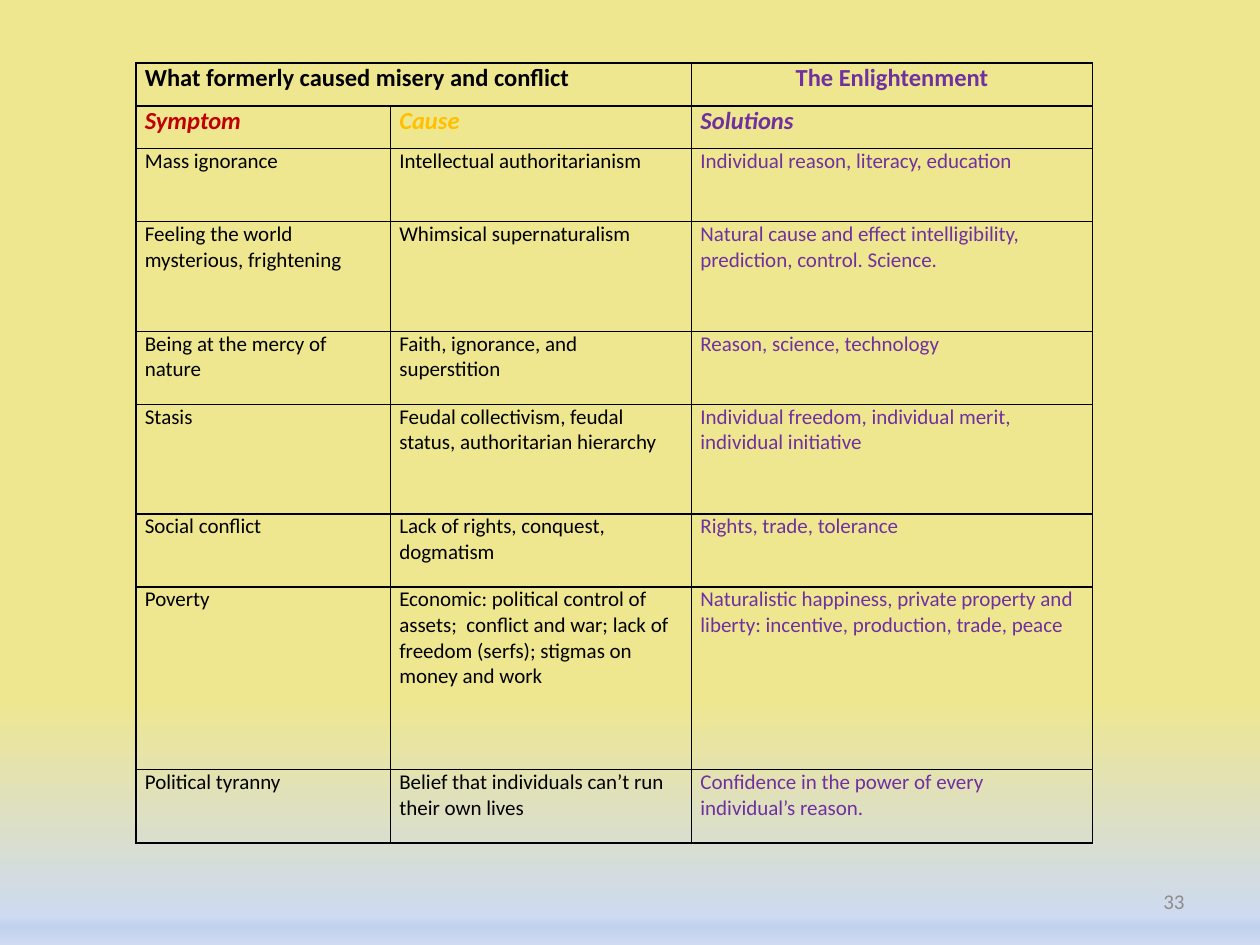
from typing import NamedTuple

from lxml import etree
from pptx import Presentation
from pptx.dml.color import RGBColor
from pptx.enum import text
from pptx.oxml import ns
from pptx.util import Inches, Pt

COLORS = {
    "ink": "000000",
    "symptom": "C00000",
    "cause": "FFC000",
    "solution": "7030A0",
    "number": "8C8C8C",
}
BACKGROUND_STOPS = [(74, "EEE790"), (97, "CEDAF0"), (98, "C2D1ED"), (100, "CFDBF0"), (100, "E1E8F5")]
FONT = "Calibri"
COLUMN_WIDTHS = [2.02, 2.39, 3.18]
HEADER_HEIGHT = 0.34
LINE_HEIGHT = 0.29


class Style(NamedTuple):
    color: str = "ink"
    size: int = 12
    bold: bool = False
    italic: bool = False
    align: text.PP_ALIGN = text.PP_ALIGN.LEFT


class Problem(NamedTuple):
    symptom: str
    cause: str
    solution: str
    lines: int


PROBLEMS = [
    Problem("Mass ignorance", "Intellectual authoritarianism",
            "Individual reason, literacy, education", 2),
    Problem("Feeling the world mysterious, frightening", "Whimsical supernaturalism",
            "Natural cause and effect intelligibility, prediction, control. Science.", 3),
    Problem("Being at the mercy of nature", "Faith, ignorance, and superstition",
            "Reason, science, technology", 2),
    Problem("Stasis", "Feudal collectivism, feudal status, authoritarian hierarchy",
            "Individual freedom, individual merit, individual initiative", 3),
    Problem("Social conflict", "Lack of rights, conquest, dogmatism",
            "Rights, trade, tolerance", 2),
    Problem("Poverty",
            "Economic: political control of assets;  conflict and war; "
            "lack of freedom (serfs); stigmas on money and work",
            "Naturalistic happiness, private property and liberty: "
            "incentive, production, trade, peace", 5),
    Problem("Political tyranny", "Belief that individuals can’t run their own lives",
            "Confidence in the power of every individual’s reason.", 2),
]


def add_color(parent, value: str) -> None:
    etree.SubElement(parent, ns.qn("a:srgbClr"), val=value)


def paint_background(slide) -> None:
    slide.background.fill.gradient()
    gradient = next(slide.element.iter(ns.qn("a:gradFill")))
    stops = gradient.find(ns.qn("a:gsLst"))
    for old_stop in list(stops):
        stops.remove(old_stop)
    for position, value in BACKGROUND_STOPS:
        add_color(etree.SubElement(stops, ns.qn("a:gs"), pos=str(position * 1000)), value)
    gradient.find(ns.qn("a:lin")).set("ang", str(90 * 60000))


def write(frame, words: str, style: Style) -> None:
    frame.text = words
    paragraph = frame.paragraphs[0]
    paragraph.alignment = style.align
    font = paragraph.runs[0].font
    font.name, font.size = FONT, Pt(style.size)
    font.bold, font.italic = style.bold, style.italic
    font.color.rgb = RGBColor.from_string(COLORS[style.color])


def format_cell(cell) -> None:
    """Clear the fill, set the margins and rule all four sides."""
    cell.margin_left = cell.margin_right = Inches(0.07)
    cell.margin_top = cell.margin_bottom = 0
    properties = cell._tc.get_or_add_tcPr()
    for side in ("lnL", "lnR", "lnT", "lnB"):
        border = etree.SubElement(properties, ns.qn(f"a:{side}"), w=str(Pt(1)))
        add_color(etree.SubElement(border, ns.qn("a:solidFill")), COLORS["ink"])
    cell.fill.background()


def add_problem_table(slide) -> None:
    heights = [HEADER_HEIGHT] * 2 + [problem.lines * LINE_HEIGHT for problem in PROBLEMS]
    table = slide.shapes.add_table(
        len(heights), len(COLUMN_WIDTHS), Inches(1.08), Inches(0.5),
        Inches(sum(COLUMN_WIDTHS)), Inches(sum(heights))).table
    table.first_row = table.horz_banding = False
    for column, width in zip(table.columns, COLUMN_WIDTHS):
        column.width = Inches(width)
    for row, height in zip(table.rows, heights):
        row.height = Inches(height)
    for cell in table.iter_cells():
        format_cell(cell)

    table.cell(0, 0).merge(table.cell(0, 1))
    heading = Style(size=14, bold=True)
    write(table.cell(0, 0).text_frame, "What formerly caused misery and conflict", heading)
    write(table.cell(0, 2).text_frame, "The Enlightenment",
          heading._replace(color="solution", align=text.PP_ALIGN.CENTER))
    for column, (label, color) in enumerate(
            [("Symptom", "symptom"), ("Cause", "cause"), ("Solutions", "solution")]):
        write(table.cell(1, column).text_frame, label, heading._replace(color=color, italic=True))

    for row, problem in enumerate(PROBLEMS, start=2):
        entries = (problem.symptom, problem.cause, problem.solution)
        for column, (entry, color) in enumerate(zip(entries, ("ink", "ink", "solution"))):
            write(table.cell(row, column).text_frame, entry, Style(color))


def add_slide_number(slide, number: str) -> None:
    frame = slide.shapes.add_textbox(Inches(7.17), Inches(6.95), Inches(2.33), Inches(0.4)).text_frame
    frame.word_wrap = True
    frame.vertical_anchor = text.MSO_ANCHOR.MIDDLE
    write(frame, number, Style("number", align=text.PP_ALIGN.RIGHT))


def main() -> None:
    presentation = Presentation()
    presentation.slide_width, presentation.slide_height = Inches(10), Inches(7.5)
    slide = presentation.slides.add_slide(presentation.slide_layouts[6])
    paint_background(slide)
    add_slide_number(slide, "33")
    add_problem_table(slide)
    presentation.save("out.pptx")


if __name__ == "__main__":
    main()
